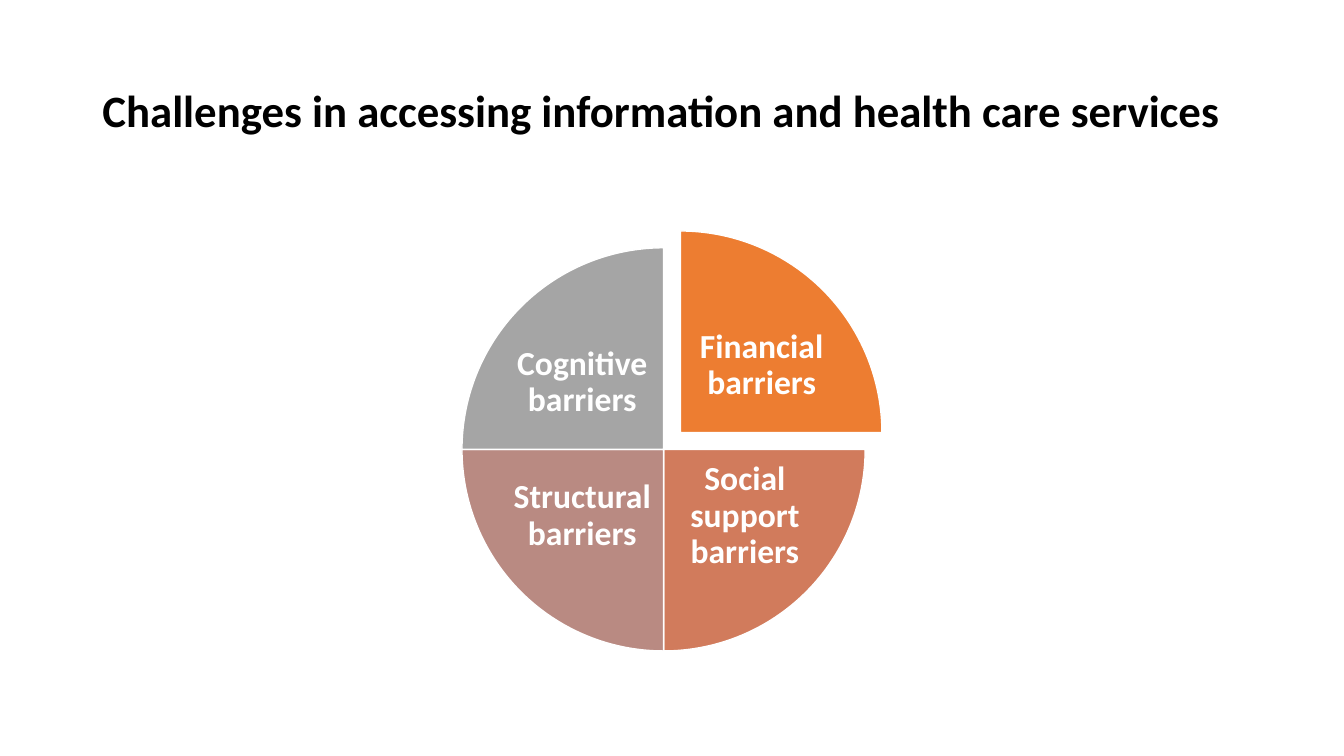
import dataclasses

import pptx
import pptx.dml.color
import pptx.enum.shapes
import pptx.enum.text
import pptx.util


@dataclasses.dataclass(frozen=True)
class Theme:
    font: str = "Calibri"
    title_size: int = 32
    label_size: int = 24
    outline_width: int = 1
    line_spacing: float = 0.9
    ink: str = "000000"
    paper: str = "FFFFFF"
    financial: str = "ED7D31"
    social: str = "D17B5C"
    structural: str = "B98A82"
    cognitive: str = "A5A5A5"


def rgb(code):
    return pptx.dml.color.RGBColor.from_string(code)


def apply(target, settings):
    for attribute, value in settings.items():
        setattr(target, attribute, value)


class SlideBuilder:
    COLUMNS, ROWS = 80, 45

    def __init__(self, deck, theme):
        self.theme = theme
        self.unit_x = deck.slide_width / self.COLUMNS
        self.unit_y = deck.slide_height / self.ROWS
        self.slide = deck.slides.add_slide(deck.slide_layouts[5])
        self.wheel = self.slide.shapes.add_group_shape()

    def box(self, column, row, columns, rows):
        return (round(column * self.unit_x), round(row * self.unit_y),
                round(columns * self.unit_x), round(rows * self.unit_y))

    def set_wording(self, frame, wording, size, color, align):
        apply(frame, {
            "text": wording,
            "word_wrap": True,
            "auto_size": pptx.enum.text.MSO_AUTO_SIZE.NONE,
            "vertical_anchor": pptx.enum.text.MSO_ANCHOR.MIDDLE,
        })
        paragraph = frame.paragraphs[0]
        apply(paragraph, {"alignment": align, "line_spacing": self.theme.line_spacing})
        font = paragraph.runs[0].font
        apply(font, {"name": self.theme.font, "size": pptx.util.Pt(size), "bold": True})
        font.color.rgb = rgb(color)

    def title(self, wording, *cells):
        heading = self.slide.shapes.title
        apply(heading, dict(zip(("left", "top", "width", "height"), self.box(*cells))))
        self.set_wording(heading.text_frame, wording, self.theme.title_size,
                         self.theme.ink, pptx.enum.text.PP_ALIGN.LEFT)

    def quarter(self, color, start, *cells):
        wedge = self.wheel.shapes.add_shape(
            pptx.enum.shapes.MSO_SHAPE.PIE, *self.box(*cells))
        wedge.shadow.inherit = False
        wedge.adjustments[0] = start * 0.6
        wedge.adjustments[1] = (start + 90) % 360 * 0.6
        wedge.fill.solid()
        wedge.fill.fore_color.rgb = rgb(color)
        wedge.line.color.rgb = rgb(self.theme.paper)
        wedge.line.width = pptx.util.Pt(self.theme.outline_width)

    def label(self, wording, *cells):
        frame = self.wheel.shapes.add_textbox(*self.box(*cells)).text_frame
        inset = pptx.util.Inches(0.03)
        apply(frame, {f"margin_{side}": inset for side in ("left", "top", "right", "bottom")})
        self.set_wording(frame, wording, self.theme.label_size,
                         self.theme.paper, pptx.enum.text.PP_ALIGN.CENTER)


def main():
    theme = Theme()
    deck = pptx.Presentation()
    deck.slide_width = pptx.util.Inches(40 / 3)
    deck.slide_height = pptx.util.Inches(7.5)
    builder = SlideBuilder(deck, theme)
    builder.title("Challenges in accessing information and health care services",
                  5.5, 2.4, 69, 8.7)

    hub_column, hub_row, radius = 39.5, 26.75, 12
    label_columns, label_rows, label_gap = 8.88, 7.14, 0.4
    barriers = [
        ("Financial barriers", theme.financial, 270, 1),
        ("Social support barriers", theme.social, 0, 0),
        ("Structural barriers", theme.structural, 90, 0),
        ("Cognitive barriers", theme.cognitive, 180, 0),
    ]
    for barrier, color, start, pull in barriers:
        column, row = hub_column + pull, hub_row - pull
        builder.quarter(color, start, column - radius, row - radius, 2 * radius, 2 * radius)
        on_right, on_bottom = start in (270, 0), start in (0, 90)
        label_column = column + (label_gap if on_right else -label_gap - label_columns)
        label_row = row + (label_gap if on_bottom else -label_gap - label_rows)
        builder.label(barrier, label_column, label_row, label_columns, label_rows)

    deck.save("out.pptx")


if __name__ == "__main__":
    main()
